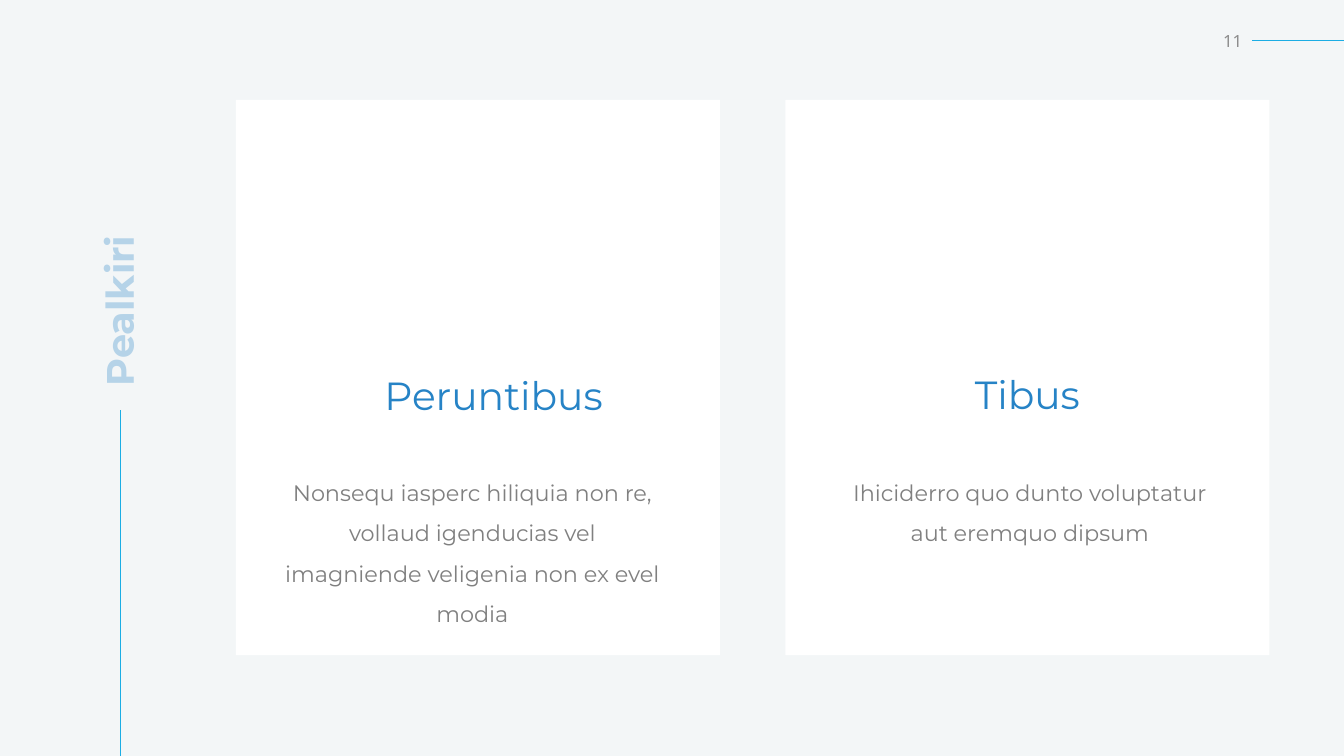
"""Build a slide with a vertical title and two text cards."""
from dataclasses import dataclass
from typing import Any

import lxml.etree
import pptx
import pptx.dml.color
import pptx.enum.shapes
import pptx.enum.text
import pptx.oxml.ns
import pptx.util

WIDTH = pptx.util.Inches(13.33)
HEIGHT = pptx.util.Inches(7.5)
ALIGN = pptx.enum.text.PP_ALIGN
ANCHOR = pptx.enum.text.MSO_ANCHOR

BACKGROUND = "F3F6F7"
WHITE = "FFFFFF"
ACCENT = "1CADE4"
BLUE = "2683C6"
GREY = "808080"
PALE_GREY = "8C8C8C"


@dataclass(frozen=True)
class Area:
    """Left, top, width and height in percent of the slide."""
    left: float
    top: float
    width: float
    height: float

    def lengths(self) -> tuple[int, int, int, int]:
        """Return the four lengths in slide units."""
        return (across(self.left), down(self.top),
                across(self.width), down(self.height))


@dataclass(frozen=True)
class Card:
    """A white panel with its heading and body text."""
    panel: Area
    heading_area: Area
    body_area: Area
    heading: str
    body: str


@dataclass(frozen=True)
class Rule:
    """A thin line between two points in percent of the slide."""
    start: tuple[float, float]
    end: tuple[float, float]


TITLE_AREA = Area(-5.18, 22.13, 28.43, 10)
NUMBER_AREA = Area(82.22, 2.67, 10.95, 5.33)
RULES = (
    Rule((93.17, 5.33), (100, 5.33)),
    Rule((8.93, 54.27), (8.93, 100)),
)
CARDS = (
    Card(Area(17.55, 13.2, 36.01, 73.47), Area(27.31, 48.4, 18.83, 7.6),
         Area(20.26, 60.93, 29.78, 23.33), "Peruntibus",
         "Nonsequ iasperc hiliquia non re, vollaud igenducias vel "
         "imagniende veligenia non ex evel modia"),
    Card(Area(58.44, 13.2, 36.01, 73.47), Area(71.34, 48.27, 10.2, 7.6),
         Area(61.74, 60.93, 29.78, 23.33), "Tibus",
         "Ihiciderro quo dunto voluptatur aut eremquo dipsum"),
)


def across(percent: float) -> int:
    """Convert a share of the slide's width to a length."""
    return round(WIDTH * percent / 100)


def down(percent: float) -> int:
    """Convert a share of the slide's height to a length."""
    return round(HEIGHT * percent / 100)


def paint(fill: Any, color: str, alpha: int = 100) -> None:
    """Fill with a hex colour at the given opacity in percent."""
    fill.solid()
    fill.fore_color.rgb = pptx.dml.color.RGBColor.from_string(color)
    if alpha < 100:
        tint = fill._xPr.find(".//" + pptx.oxml.ns.qn("a:srgbClr"))
        lxml.etree.SubElement(tint, pptx.oxml.ns.qn("a:alpha"),
                              val=str(alpha * 1000))


def write(box: Any, text: str, *, size: float, color: str, alpha: int = 100,
          font: str = "Montserrat", bold: bool = False, align: Any = ALIGN.CENTER,
          anchor: Any = ANCHOR.TOP, wrap: bool = True, spacing: float = 1) -> None:
    """Put one formatted paragraph without a bullet into a box."""
    frame = box.text_frame
    frame.auto_size = pptx.enum.text.MSO_AUTO_SIZE.NONE
    frame.word_wrap = wrap
    frame.vertical_anchor = anchor
    para = frame.paragraphs[0]
    para.alignment = align
    para.line_spacing = spacing
    para.space_before = pptx.util.Pt(0)
    properties = para._p.get_or_add_pPr()
    properties.set("marL", "0")
    properties.set("indent", "0")
    lxml.etree.SubElement(properties, pptx.oxml.ns.qn("a:buNone"))
    span = para.add_run()
    span.text = text
    span.font.name = font
    span.font.size = pptx.util.Pt(size)
    span.font.bold = bold
    paint(span.font.fill, color, alpha)


def place(box: Any, area: Area) -> None:
    """Move a placeholder to an area."""
    box.left, box.top, box.width, box.height = area.lengths()


def draw_rule(page: Any, rule: Rule) -> None:
    """Draw a thin accent line."""
    line = page.shapes.add_connector(
        pptx.enum.shapes.MSO_CONNECTOR.STRAIGHT,
        across(rule.start[0]), down(rule.start[1]),
        across(rule.end[0]), down(rule.end[1]))
    line.line.width = pptx.util.Pt(0.5)
    paint(line.line.fill, ACCENT)
    lxml.etree.SubElement(line._element.spPr, pptx.oxml.ns.qn("a:effectLst"))


def draw_card(page: Any, card: Card, body: Any) -> None:
    """Draw a panel behind its body placeholder and add the heading."""
    panel = page.shapes.add_shape(
        pptx.enum.shapes.MSO_SHAPE.RECTANGLE, *card.panel.lengths())
    panel.shadow.inherit = False
    paint(panel.fill, WHITE)
    panel.line.fill.background()
    body._element.addprevious(panel._element)
    place(body, card.body_area)
    write(body, card.body, size=16, color=GREY, spacing=1.5)
    heading = page.shapes.add_textbox(*card.heading_area.lengths())
    write(heading, card.heading, size=28, color=BLUE, wrap=False)


def main() -> None:
    """Build and save the deck."""
    deck = pptx.Presentation()
    deck.slide_width, deck.slide_height = WIDTH, HEIGHT
    page = deck.slides.add_slide(deck.slide_layouts.get_by_name("Two Content"))
    paint(page.background.fill, BACKGROUND)

    title, *bodies = page.placeholders
    place(title, TITLE_AREA)
    title.rotation = 270
    write(title, "Pealkiri", size=27.3, color=BLUE, alpha=30, bold=True,
          align=ALIGN.LEFT, anchor=ANCHOR.MIDDLE, spacing=0.9)

    for rule in RULES:
        draw_rule(page, rule)
    number = page.shapes.add_textbox(*NUMBER_AREA.lengths())
    write(number, "11", size=12, color=PALE_GREY, font="Noto Sans",
          align=ALIGN.RIGHT, anchor=ANCHOR.MIDDLE)

    for card, body in zip(CARDS, bodies):
        draw_card(page, card, body)
    deck.save("out.pptx")


if __name__ == "__main__":
    main()
